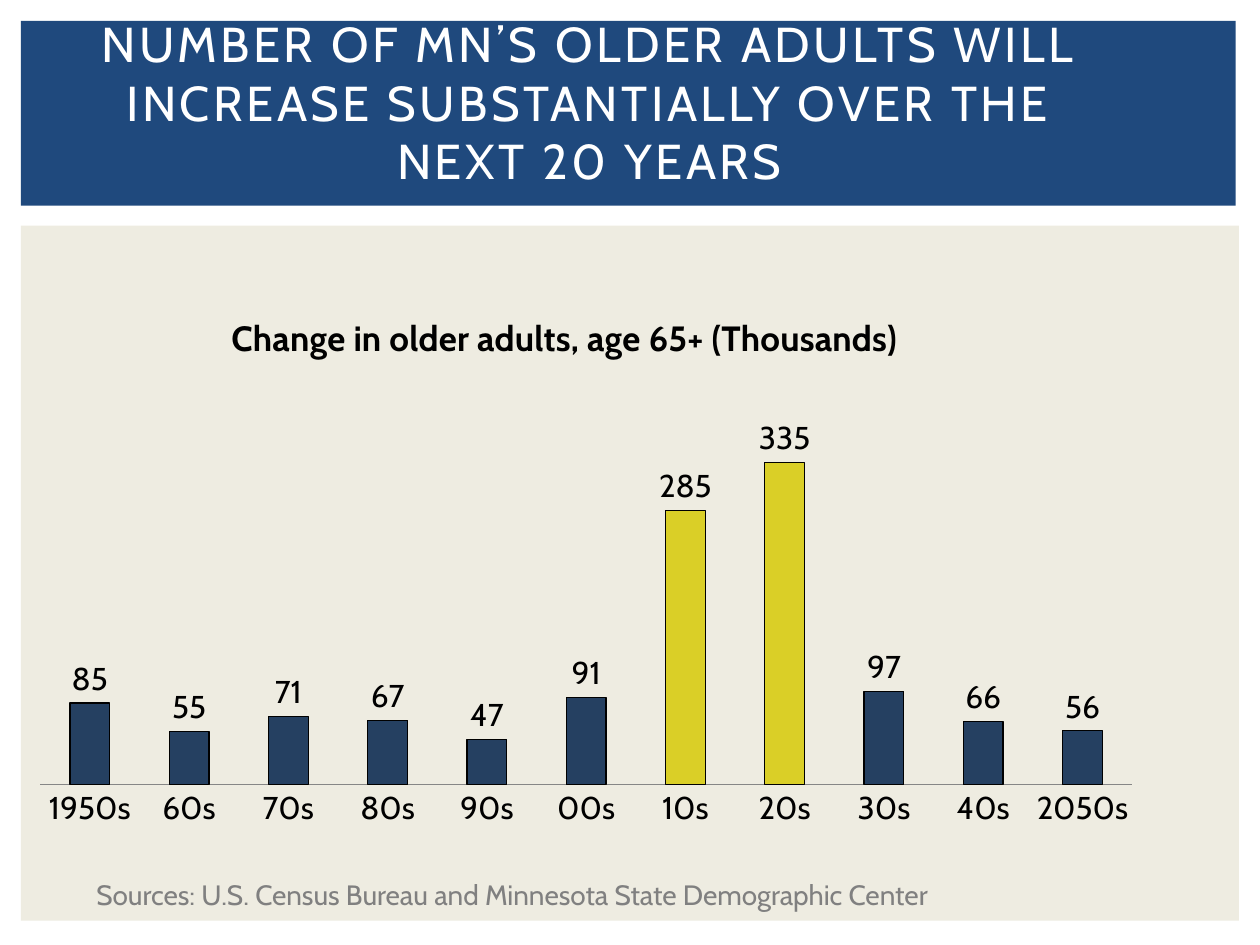
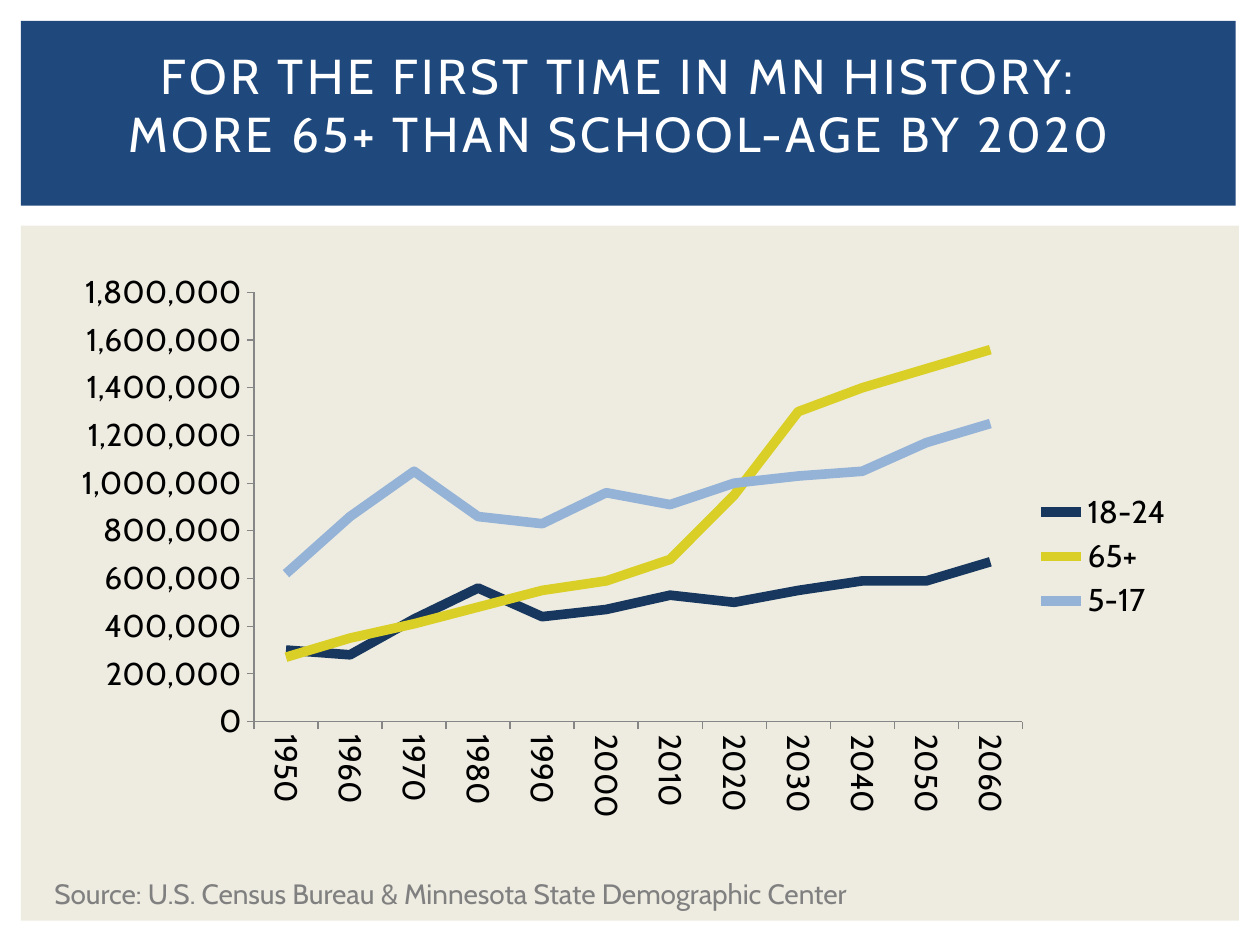
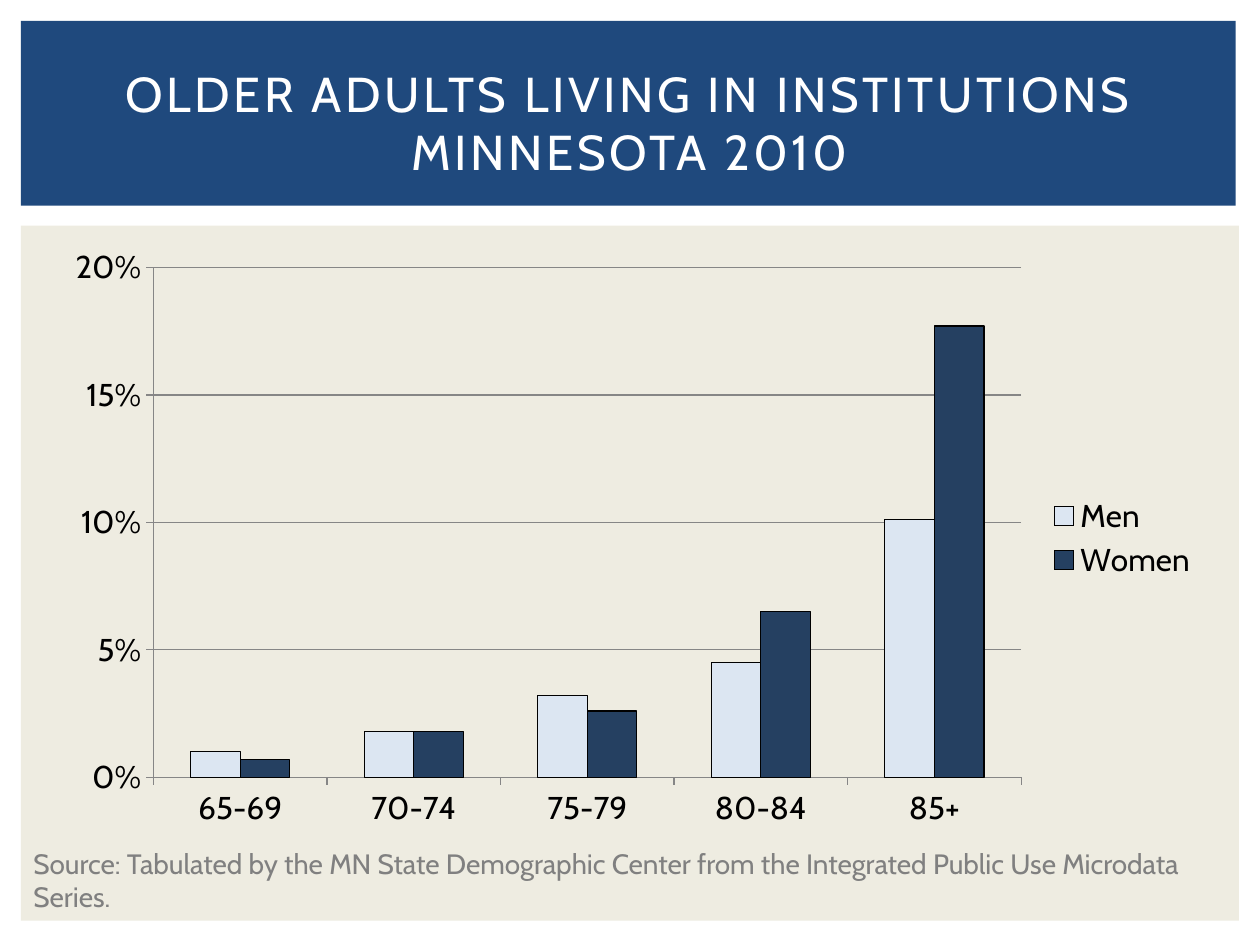
"""Build three slides of charts about Minnesota's older adults."""
from dataclasses import dataclass, field
from typing import NamedTuple

from lxml.etree import SubElement
from pptx import Presentation
from pptx.chart.data import CategoryChartData
from pptx.dml.color import RGBColor
from pptx.enum.chart import XL_CHART_TYPE as Kind
from pptx.enum.chart import XL_LABEL_POSITION as LabelAt
from pptx.enum.chart import XL_LEGEND_POSITION as LegendAt
from pptx.enum.chart import XL_TICK_MARK as Tick
from pptx.enum.shapes import MSO_SHAPE as Shape
from pptx.enum.text import MSO_ANCHOR as Anchor
from pptx.enum.text import MSO_AUTO_SIZE as AutoSize
from pptx.enum.text import PP_ALIGN as Align
from pptx.oxml.ns import qn
from pptx.util import Inches, Pt

COLORS = {
    "white": "FFFFFF",
    "black": "000000",
    "band": "1F497D",
    "panel": "EEECE1",
    "source": "808080",
    "axis": "868686",
    "navy": "254061",
    "dark": "17375E",
    "yellow": "DACF27",
    "sky": "95B3D7",
    "pale": "DCE6F2",
}
FONT = "Cabin"
COLS, ROWS = 120, 90
SLIDE_W, SLIDE_H = Inches(10), Inches(7.5)


class Box(NamedTuple):
    """Left, top, width and height in grid columns and rows."""
    col: float
    row: float
    cols: float
    rows: float

    def emu(self) -> tuple[int, ...]:
        cw, rh = SLIDE_W / COLS, SLIDE_H / ROWS
        return (int(self.col * cw), int(self.row * rh),
                int(self.cols * cw), int(self.rows * rh))


class Series(NamedTuple):
    name: str
    color: str
    values: tuple
    points: dict = {}


@dataclass
class ChartDef:
    box: Box
    kind: Kind
    cats: list[str]
    series: list[Series]
    top: float
    step: float
    fmt: str = "#,##0"
    title: str = ""
    plot: dict = field(default_factory=dict)
    overlap: int = 0
    grid: bool = False
    labels: bool = False
    vertical_cats: bool = False


@dataclass
class SlideDef:
    title: str
    title_box: Box
    source: str
    source_box: Box
    chart: ChartDef
    title_bottom: float = 0.05


PANEL_BOX = Box(2, 21.5, 116, 66.2)
BAND_BOX = Box(2, 2, 115.7, 17.6)

SLIDES = [
    SlideDef(
        "NUMBER OF MN’S OLDER ADULTS WILL INCREASE SUBSTANTIALLY OVER THE NEXT 20 YEARS",
        Box(6.6, 4, 99.1, 17),
        "Sources: U.S. Census Bureau and Minnesota State Demographic Center",
        Box(8, 83, 90.5, 4.4),
        ChartDef(
            Box(2, 26, 108, 54.4), Kind.COLUMN_CLUSTERED,
            ["1950s", "60s", "70s", "80s", "90s", "00s",
             "10s", "20s", "30s", "40s", "2050s"],
            [Series("Series 1", "navy",
                    (85, 55, 71, 67, 47, 91, 285, 335, 97, 66, 56),
                    {6: "yellow", 7: "yellow"})],
            top=400, step=50, overlap=-25, labels=True,
            title="Change in older adults, age 65+ (Thousands)",
            plot=dict(x=0.017, y=0.223, w=0.963, h=0.673)),
        title_bottom=0.52),
    SlideDef(
        "FOR THE FIRST TIME IN MN HISTORY:\nMORE 65+ THAN SCHOOL-AGE BY 2020",
        Box(4, 3, 110, 13.8),
        "Source: U.S. Census Bureau & Minnesota State Demographic Center",
        Box(4, 82.9, 90.5, 4.4),
        ChartDef(
            Box(6, 25, 107, 56), Kind.LINE,
            [str(year) for year in range(1950, 2061, 10)],
            [Series("18-24", "dark",
                    (300000, 280000, 430000, 560000, 440000, 470000,
                     530000, 500000, 550000, 590000, 590000, 670000)),
             Series("65+", "yellow",
                    (270000, 350000, 410000, 480000, 550000, 590000,
                     680000, 950000, 1300000, 1400000, 1480000, 1560000)),
             Series("5-17", "sky",
                    (620000, 860000, 1050000, 860000, 830000, 960000,
                     910000, 1000000, 1030000, 1050000, 1170000, 1250000))],
            top=1800000, step=200000, vertical_cats=True,
            plot=dict(x=0.17, y=0.051, w=0.684, h=0.73))),
    SlideDef(
        "OLDER ADULTS LIVING IN INSTITUTIONS\nMINNESOTA 2010",
        Box(5, 4.7, 110, 13.8),
        "Source: Tabulated by the MN State Demographic Center from the "
        "Integrated Public Use Microdata Series.",
        Box(2, 80, 115, 7.7),
        ChartDef(
            Box(5, 22.5, 110.3, 57.5), Kind.COLUMN_CLUSTERED,
            ["65-69", "70-74", "75-79", "80-84", "85+"],
            [Series("Men", "pale", (0.01, 0.018, 0.032, 0.045, 0.101)),
             Series("Women", "navy", (0.007, 0.018, 0.026, 0.065, 0.177))],
            top=0.2, step=0.05, fmt="0%", grid=True)),
]


def rgb(name: str) -> RGBColor:
    return RGBColor.from_string(COLORS[name])


def paint(fill, color: str) -> None:
    fill.solid()
    fill.fore_color.rgb = rgb(color)


def style_font(font, size: float, color: str = "black", bold: bool = False) -> None:
    font.name, font.size, font.bold = FONT, Pt(size), bold
    font.color.rgb = rgb(color)


def style_line(line, color: str, width: float = 0.75) -> None:
    line.color.rgb = rgb(color)
    line.width = Pt(width)


def add_text(slide, box: Box, text: str, *, size: float, color: str,
             align=Align.LEFT, anchor=Anchor.TOP, fit=AutoSize.NONE,
             spacing: float = 0, bottom: float = 0.05) -> None:
    tf = slide.shapes.add_textbox(*box.emu()).text_frame
    tf.word_wrap, tf.auto_size, tf.vertical_anchor = True, fit, anchor
    tf.margin_bottom = Inches(bottom)
    p = tf.paragraphs[0]
    p.alignment = align
    for i, line in enumerate(text.split("\n")):
        if i:
            p.add_line_break()
        r = p.add_run()
        r.text = line
        style_font(r.font, size, color)
        if spacing:
            r.font._element.set("spc", str(int(spacing * 100)))


def add_backdrop(slide, layout) -> None:
    """Put the panel and the title band on the layout all slides share."""
    for ph in list(layout.placeholders):
        ph.element.getparent().remove(ph.element)
    for box, color in ((PANEL_BOX, "panel"), (BAND_BOX, "band")):
        sp = slide.shapes.add_shape(Shape.RECTANGLE, *box.emu())
        sp.shadow.inherit = False
        paint(sp.fill, color)
        sp.line.fill.background()
    for sp in list(slide.shapes):
        layout.shapes.element.append(sp.element)


def set_layout(parent, index: int, inner: bool = False, **shares: float) -> None:
    """Place a chart part by shares of the chart's size."""
    for old in parent.findall(qn("c:layout")):
        parent.remove(old)
    layout = SubElement(parent, qn("c:layout"))
    parent.insert(index, layout)
    manual = SubElement(layout, qn("c:manualLayout"))
    items = {"layoutTarget": "inner"} if inner else {}
    items |= {"xMode": "edge", "yMode": "edge"}
    items |= {key: str(value) for key, value in shares.items()}
    for key, value in items.items():
        SubElement(manual, qn(f"c:{key}")).set("val", value)


def style_axes(chart, d: ChartDef) -> None:
    cat, val = chart.category_axis, chart.value_axis
    tick = Tick.NONE if d.labels else Tick.OUTSIDE
    for axis in (cat, val):
        axis.major_tick_mark, axis.minor_tick_mark = tick, Tick.NONE
        style_line(axis.format.line, "axis")
        style_font(axis.tick_labels.font, 18)
    cat.has_major_gridlines = False
    val.minimum_scale, val.maximum_scale, val.major_unit = 0, d.top, d.step
    val.tick_labels.number_format = d.fmt
    val.tick_labels.number_format_is_linked = False
    val.has_major_gridlines = d.grid
    val.visible = not d.labels
    if d.grid:
        style_line(val.major_gridlines.format.line, "axis")
    if d.vertical_cats:
        body = cat._element.find(f"{qn('c:txPr')}/{qn('a:bodyPr')}")
        body.set("rot", "5400000")
        body.set("vert", "horz")


def style_series(plot, d: ChartDef) -> None:
    plot.vary_by_categories = False
    if d.kind != Kind.LINE:
        plot.gap_width, plot.overlap = 150, d.overlap
    for ser, s in zip(plot.series, d.series):
        if d.kind == Kind.LINE:
            ser.smooth = False
            style_line(ser.format.line, s.color, 5.5)
            continue
        ser.invert_if_negative = False
        paint(ser.format.fill, s.color)
        style_line(ser.format.line, "black")
        for i, color in s.points.items():
            fmt = ser.points[i].format
            paint(fmt.fill, color)
            style_line(fmt.line, "black")
    if d.labels:
        plot.has_data_labels = True
        labels = plot.data_labels
        labels.show_value, labels.position = True, LabelAt.OUTSIDE_END
        labels.number_format, labels.number_format_is_linked = d.fmt, False
        style_font(labels.font, 18)


def add_chart(slide, d: ChartDef) -> None:
    data = CategoryChartData()
    data.categories = d.cats
    for s in d.series:
        data.add_series(s.name, s.values)
    chart = slide.shapes.add_chart(d.kind, *d.box.emu(), data).chart
    style_font(chart.font, 18)
    style_axes(chart, d)
    style_series(chart.plots[0], d)
    chart.has_title = bool(d.title)
    if d.title:
        tf = chart.chart_title.text_frame
        tf.text = d.title
        style_font(tf.paragraphs[0].runs[0].font, 20, bold=True)
        set_layout(chart.chart_title._element, 1, x=0.18, y=0.06)
    chart.has_legend = len(d.series) > 1
    if chart.has_legend:
        chart.legend.position = LegendAt.RIGHT
        chart.legend.include_in_layout = False
        style_font(chart.legend.font, 18)
    if d.plot:
        area = chart.element.find(f"{qn('c:chart')}/{qn('c:plotArea')}")
        set_layout(area, 0, inner=True, **d.plot)


def main() -> None:
    prs = Presentation()
    prs.slide_width, prs.slide_height = SLIDE_W, SLIDE_H
    blank = prs.slide_layouts[6]
    for i, d in enumerate(SLIDES):
        slide = prs.slides.add_slide(blank)
        if i == 0:
            add_backdrop(slide, blank)
        add_text(slide, d.title_box, d.title, size=28, color="white",
                 align=Align.CENTER, anchor=Anchor.MIDDLE, spacing=2,
                 bottom=d.title_bottom)
        add_chart(slide, d.chart)
        add_text(slide, d.source_box, d.source, size=16, color="source",
                 fit=AutoSize.SHAPE_TO_FIT_TEXT)
    prs.save("out.pptx")


if __name__ == "__main__":
    main()
